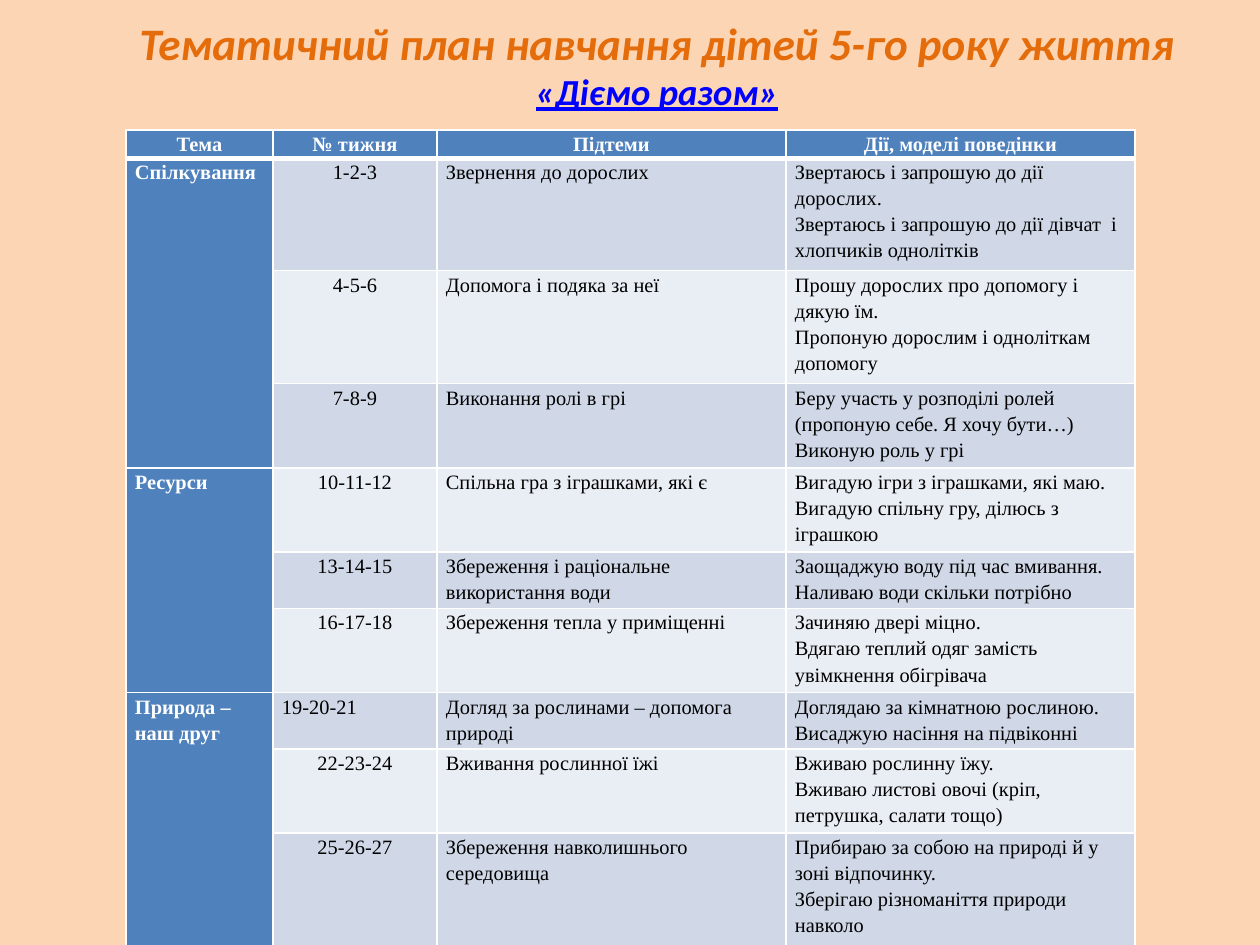
import pptx
import pptx.util
import pptx.dml.color
import pptx.enum.text
import pptx.oxml
import pptx.oxml.ns

PX = 6858
ALIGN = pptx.enum.text.PP_ALIGN
COLS = [147, 164, 349, 349]
ROWS = [28, 110, 113, 84, 83, 56, 83, 56, 84, 111]
HEADER = ["Тема", "№ тижня", "Підтеми", "Дії, моделі поведінки"]
THEMES = {
    "Спілкування": [
        ("1-2-3", "Звернення до дорослих",
         "Звертаюсь і запрошую до дії дорослих.",
         "Звертаюсь і запрошую до дії дівчат  і хлопчиків однолітків"),
        ("4-5-6", "Допомога і подяка за неї",
         "Прошу дорослих про допомогу і дякую їм.",
         "Пропоную дорослим і одноліткам допомогу"),
        ("7-8-9", "Виконання ролі в грі",
         "Беру участь у розподілі ролей (пропоную себе. Я хочу бути…)",
         "Виконую роль у грі"),
    ],
    "Ресурси": [
        ("10-11-12", "Спільна гра з іграшками, які є",
         "Вигадую ігри з іграшками, які маю.",
         "Вигадую спільну гру, ділюсь з іграшкою"),
        ("13-14-15", "Збереження і раціональне використання води",
         "Заощаджую воду під час вмивання.",
         "Наливаю води скільки потрібно"),
        ("16-17-18", "Збереження тепла у приміщенні",
         "Зачиняю двері міцно.",
         "Вдягаю теплий одяг замість увімкнення обігрівача"),
    ],
    "Природа – наш друг": [
        ("19-20-21", "Догляд за рослинами – допомога природі",
         "Доглядаю за кімнатною рослиною.",
         "Висаджую насіння на підвіконні"),
        ("22-23-24", "Вживання рослинної їжі",
         "Вживаю рослинну їжу.",
         "Вживаю листові овочі (кріп, петрушка, салати тощо)"),
        ("25-26-27", "Збереження навколишнього середовища",
         "Прибираю за собою на природі й у зоні відпочинку.",
         "Зберігаю різноманіття природи навколо"),
    ],
}


def px(n):
    return pptx.util.Emu(n * PX)


def rgb(color):
    return pptx.dml.color.RGBColor.from_string(color)


def write(p, text, font="Times New Roman", size=11, color="000000", bold=False,
          italic=False, underline=False, align=ALIGN.LEFT, spacing=1.0):
    p.alignment = align
    p.line_spacing = spacing
    r = p.add_run()
    r.text = text
    f = r.font
    f.name, f.size = font, pptx.util.Pt(size)
    f.bold, f.italic, f.underline = bold, italic, underline
    f.color.rgb = rgb(color)


def border(cell, side, width, color="FFFFFF"):
    cell._tc.get_or_add_tcPr().append(pptx.oxml.parse_xml(
        f'<a:ln{side} {pptx.oxml.ns.nsdecls("a")} w="{pptx.util.Pt(width)}">'
        f'<a:solidFill><a:srgbClr val="{color}"/></a:solidFill></a:ln{side}>'))


class Deck:
    """Holds the table style and the slide being drawn."""

    head = "4F81BD"
    bands = ["E9EDF4", "D0D8E8"]

    def __init__(self, prs, background):
        self.s = prs.slides.add_slide(prs.slide_layouts[6])
        self.s.background.fill.solid()
        self.s.background.fill.fore_color.rgb = rgb(background)

    def title(self, x, y, w, h, lines):
        tf = self.s.shapes.add_textbox(px(x), px(y), px(w), px(h)).text_frame
        tf.word_wrap = True
        tf.vertical_anchor = pptx.enum.text.MSO_ANCHOR.MIDDLE
        tf.margin_top = tf.margin_bottom = 0
        for i, (text, style) in enumerate(lines):
            p = tf.add_paragraph() if i else tf.paragraphs[0]
            write(p, text, font="Calibri", bold=True, italic=True,
                  align=ALIGN.CENTER, **style)

    def table(self, x, y, cols, rows):
        t = self.s.shapes.add_table(len(rows), len(cols), px(x), px(y),
                                    px(sum(cols)), px(sum(rows))).table
        for col, w in zip(t.columns, cols):
            col.width = px(w)
        for row, h in zip(t.rows, rows):
            row.height = px(h)
        for i in range(len(rows)):
            for j in range(len(cols)):
                self.frame(t.cell(i, j), i, j)
        return t

    def frame(self, cell, i, j):
        cell.margin_left = cell.margin_right = px(9)
        cell.margin_top = cell.margin_bottom = 0
        for side in "LRTB":
            under_head = (i, side) in [(0, "B"), (1, "T")]
            border(cell, side, 3 if under_head else 1)
        cell.fill.solid()
        cell.fill.fore_color.rgb = rgb(self.head if i == 0 or j == 0 else self.bands[i % 2])

    def fill_cell(self, cell, *lines, **style):
        tf = cell.text_frame
        for i, text in enumerate(lines):
            p = tf.add_paragraph() if i else tf.paragraphs[0]
            write(p, text, spacing=1.15, **style)


def main():
    prs = pptx.Presentation()
    prs.slide_width, prs.slide_height = px(1260), px(945)
    deck = Deck(prs, "FCD5B5")
    deck.title(95, 14, 1124, 100, [
        ("Тематичний план навчання дітей 5-го року життя", dict(size=24.3, color="E46C0A")),
        ("«Діємо разом»", dict(size=19.8, color="0000FF", underline=True)),
    ])
    t = deck.table(126, 130, COLS, ROWS)
    for j, text in enumerate(HEADER):
        deck.fill_cell(t.cell(0, j), text, color="FFFFFF", bold=True, align=ALIGN.CENTER)
    i = 1
    for theme, weeks in THEMES.items():
        t.cell(i, 0).merge(t.cell(i + len(weeks) - 1, 0))
        deck.fill_cell(t.cell(i, 0), theme, color="FFFFFF", bold=True)
        for week, subtopic, *actions in weeks:
            align = ALIGN.LEFT if week == "19-20-21" else ALIGN.CENTER
            deck.fill_cell(t.cell(i, 1), week, align=align)
            deck.fill_cell(t.cell(i, 2), subtopic)
            deck.fill_cell(t.cell(i, 3), *actions)
            i += 1
    prs.save("out.pptx")


if __name__ == "__main__":
    main()
